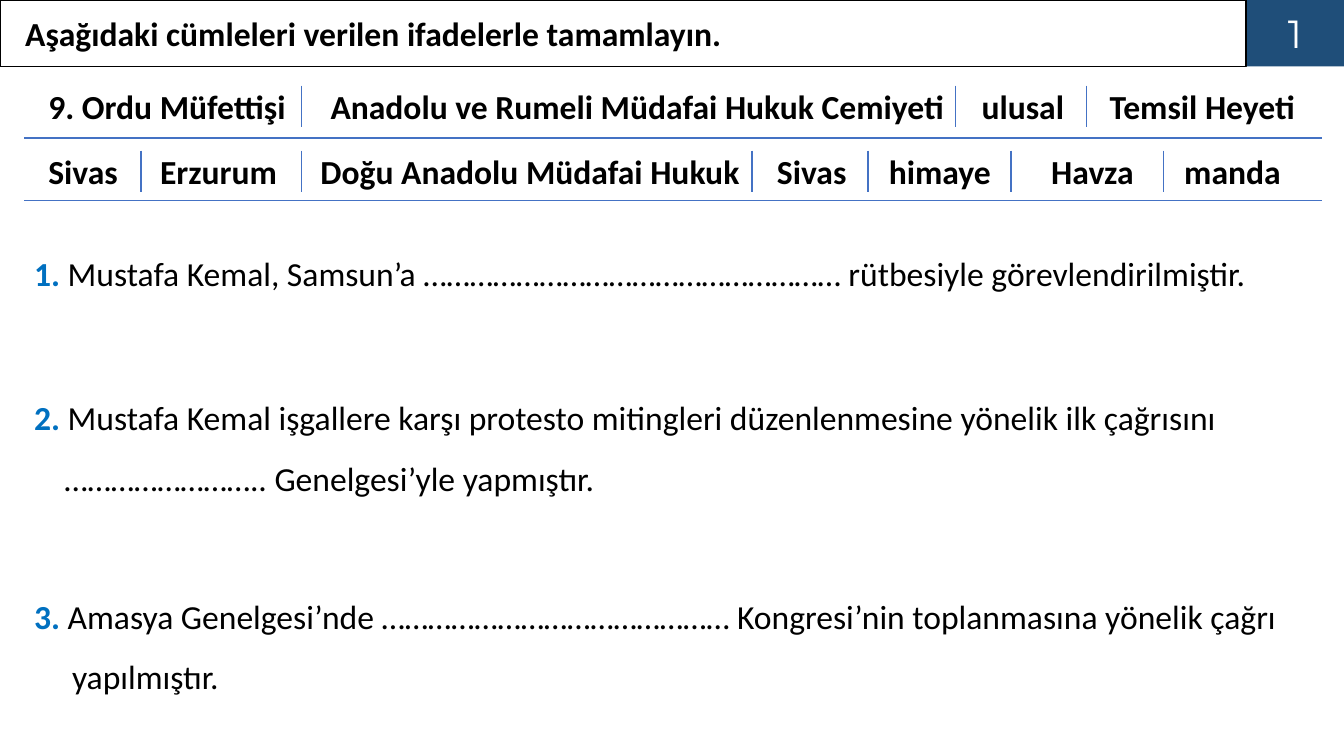
from pptx import Presentation
from pptx.util import Pt
from pptx.dml.color import RGBColor
from pptx.enum.shapes import MSO_SHAPE, MSO_CONNECTOR
from pptx.enum.text import PP_ALIGN, MSO_ANCHOR
from lxml.etree import SubElement
from pptx.oxml.ns import qn


def paint(target, color):
    if hasattr(target, "solid"):
        target.solid()
        target.fore_color.rgb = RGBColor.from_string(color)
    else:
        target.color.rgb = RGBColor.from_string(color)


def style(run, size=24, bold=False, color="000000", face="Calibri"):
    run.font.size = Pt(size)
    run.font.bold = bold
    run.font.name = face
    paint(run.font, color)


deck = Presentation()
deck.slide_width, deck.slide_height = Pt(960), Pt(540)
slide = deck.slides.add_slide(deck.slide_layouts[6])
shapes = slide.shapes

bars = [
    (890, 70, "1", PP_ALIGN.CENTER, 7.2, dict(size=28, color="FFFFFF", face="Montserrat")),
    (0, 890, "Aşağıdaki cümleleri verilen ifadelerle tamamlayın.", PP_ALIGN.LEFT, 18, dict(bold=True)),
]
for left, width, text, align, inset, look in bars:
    bar = shapes.add_shape(MSO_SHAPE.RECTANGLE, Pt(left), Pt(0), Pt(width), Pt(47.5))
    bar.shadow.inherit = False
    if left:
        paint(bar.fill, "1F4E79")
        bar.line.fill.background()
    else:
        bar.fill.background()
        paint(bar.line, "000000")
        bar.line.width = Pt(1)
    frame = bar.text_frame
    frame.text = text
    frame.margin_left = Pt(inset)
    frame.vertical_anchor = MSO_ANCHOR.MIDDLE
    frame.paragraphs[0].alignment = align
    style(frame.paragraphs[0].runs[0], **look)

rows = [
    (57.6, [
        (27.4, 186.5, "9. Ordu Müfettişi"),
        (229, 457.2, "Anadolu ve Rumeli Müdafai Hukuk Cemiyeti"),
        (694.1, 74.2, "ulusal"),
        (785.5, 148.3, "Temsil Heyeti"),
    ], [215.3, 682.6, 776.2]),
    (104, [
        (27.4, 64.8, "Sivas"),
        (107.3, 98.6, "Erzurum"),
        (221.8, 316.8, "Doğu Anadolu Müdafai Hukuk"),
        (547.9, 64.8, "Sivas"),
        (627.8, 87.8, "himaye"),
        (743.8, 74.2, "Havza"),
        (838.8, 84.2, "manda"),
    ], [100.8, 215.3, 537.1, 619.9, 722.2, 830.9]),
]
lines = [(17.3, y, 944, y) for y in (98.6, 143.3)]
for top, words, marks in rows:
    for left, width, word in words:
        box = shapes.add_textbox(Pt(left), Pt(top), Pt(width), Pt(36))
        box.text_frame.word_wrap = False
        box.text_frame.text = word
        style(box.text_frame.paragraphs[0].runs[0], bold=True)
    lines += [(x, top + 3.6, x, top + 33) for x in marks]

for ends in lines:
    line = shapes.add_connector(MSO_CONNECTOR.STRAIGHT, *map(Pt, ends))
    paint(line.line, "4472C4")
    line.line.width = Pt(1)
    SubElement(line._element.spPr, qn("a:effectLst"))

tasks = [
    (177, 894, 36, 1, 0, [
        "Mustafa Kemal, Samsun’a ……………………………………………… rütbesiyle görevlendirilmiştir.",
    ]),
    (265.7, 867, 90, 1.5, 21.7, [
        "Mustafa Kemal işgallere karşı protesto mitingleri düzenlenmesine yönelik ilk çağrısını",
        "…………………….. Genelgesi’yle yapmıştır.",
    ]),
    (407.5, 911, 90, 1.5, 27.1, [
        "Amasya Genelgesi’nde ……………………………………… Kongresi’nin toplanmasına yönelik çağrı",
        "yapılmıştır.",
    ]),
]
for num, (top, width, height, space, indent, parts) in enumerate(tasks, 1):
    box = shapes.add_textbox(Pt(17.3), Pt(top), Pt(width), Pt(height))
    frame = box.text_frame
    frame.word_wrap = False
    frame.text = f"{num}. "
    first = frame.paragraphs[0]
    style(first.runs[0], bold=True, color="0070C0")
    for pos, part in enumerate(parts):
        para = frame.add_paragraph() if pos else first
        para.line_spacing = float(space)
        if pos:
            para._p.get_or_add_pPr().set("marL", str(Pt(indent)))
        run = para.add_run()
        run.text = part
        style(run)

deck.save("out.pptx")
